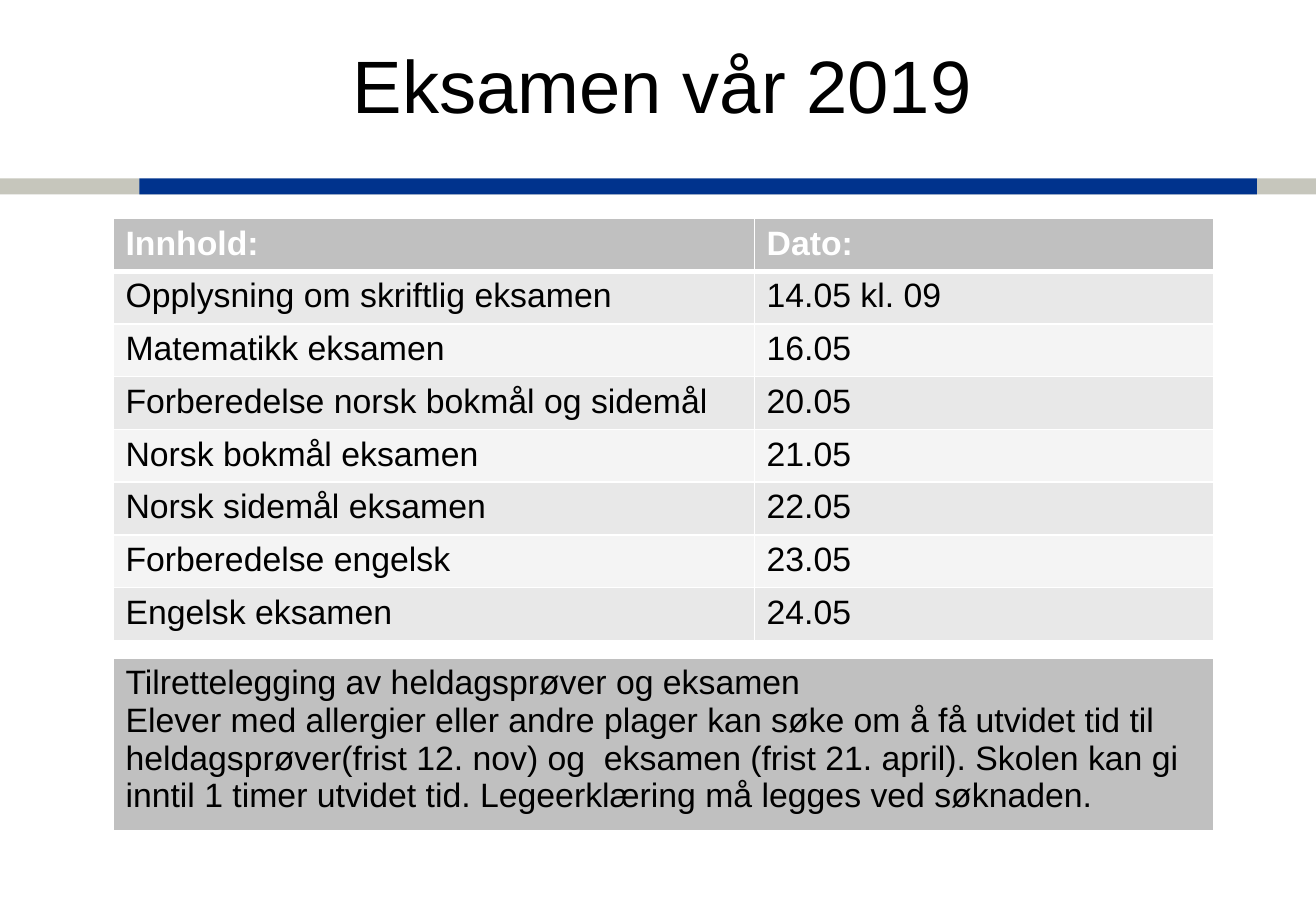
"""Build the slide with the exam dates for spring 2019."""
from dataclasses import dataclass

from lxml import etree
from pptx import Presentation
from pptx.dml.color import RGBColor
from pptx.enum.shapes import MSO_SHAPE
from pptx.enum.text import MSO_ANCHOR, PP_ALIGN
from pptx.oxml.ns import qn
from pptx.util import Pt

RECTANGLE = MSO_SHAPE.RECTANGLE
TOP = MSO_ANCHOR.TOP
CENTER = PP_ALIGN.CENTER


@dataclass(frozen=True)
class Theme:
    font: str = "Arial"
    title_size: int = 44
    table_size: int = 20
    black: str = "000000"
    white: str = "FFFFFF"
    blue: str = "00338D"
    sand: str = "C6C6BC"
    header: str = "C0C0C0"
    odd_row: str = "E8E8E8"
    even_row: str = "F4F4F4"


THEME = Theme()


def add_run(paragraph, text, size, color, bold=False):
    run = paragraph.add_run()
    run.text = text
    run.font.name = THEME.font
    run.font.size = Pt(size)
    run.font.bold = bold
    run.font.color.rgb = RGBColor.from_string(color)


def style_cell(cell, fill, top=1, bottom=1):
    properties = cell._tc.get_or_add_tcPr()
    for side, width in (("L", 1), ("R", 1), ("T", top), ("B", bottom)):
        line = etree.SubElement(properties, qn(f"a:ln{side}"), w=str(Pt(width)))
        solid = etree.SubElement(line, qn("a:solidFill"))
        etree.SubElement(solid, qn("a:srgbClr"), val=THEME.white)
    cell.fill.solid()
    cell.fill.fore_color.rgb = RGBColor.from_string(fill)


WIDTH, HEIGHT = 780, 540
TABLE_LEFT = 67.2
COLUMN_WIDTHS = (380, 272)
ROW_HEIGHT = 29.5

BANDS = [
    (0, 98, WIDTH, 17.2, THEME.sand),
    (82.6, 98, 662.4, 17.2, THEME.blue),
    (0, 0, WIDTH, 105.8, THEME.white),
]
SCHEDULE = [
    ("Innhold:", "Dato:"),
    ("Opplysning om skriftlig eksamen", "14.05 kl. 09"),
    ("Matematikk eksamen", "16.05"),
    ("Forberedelse norsk bokmål og sidemål", "20.05"),
    ("Norsk bokmål eksamen", "21.05"),
    ("Norsk sidemål eksamen", "22.05"),
    ("Forberedelse engelsk", "23.05"),
    ("Engelsk eksamen", "24.05"),
]
ACCOMMODATION = [
    "Tilrettelegging av heldagsprøver og eksamen",
    "Elever med allergier eller andre plager kan søke om å få utvidet tid til "
    "heldagsprøver(frist 12. nov) og  eksamen (frist 21. april). Skolen kan gi "
    "inntil 1 timer utvidet tid. Legeerklæring må legges ved søknaden.",
]

prs = Presentation()
prs.slide_width, prs.slide_height = Pt(WIDTH), Pt(HEIGHT)
slide = prs.slides.add_slide(prs.slide_layouts[6])

for left, top, width, height, color in BANDS:
    band = slide.shapes.add_shape(RECTANGLE, Pt(left), Pt(top), Pt(width), Pt(height))
    band.shadow.inherit = False
    band.fill.solid()
    band.fill.fore_color.rgb = RGBColor.from_string(color)
    band.line.fill.background()

title = slide.shapes.add_textbox(Pt(39.6), Pt(15), Pt(706.4), Pt(85)).text_frame
title.word_wrap = True
title.vertical_anchor = TOP
title.margin_top = Pt(8)
title.paragraphs[0].alignment = CENTER
add_run(title.paragraphs[0], "Eksamen vår 2019", THEME.title_size, THEME.black)

schedule = slide.shapes.add_table(
    len(SCHEDULE), len(COLUMN_WIDTHS), Pt(TABLE_LEFT), Pt(129.6),
    Pt(sum(COLUMN_WIDTHS)), Pt(ROW_HEIGHT * len(SCHEDULE))).table
for column, width in zip(schedule.columns, COLUMN_WIDTHS):
    column.width = Pt(width)
for row, entry in enumerate(SCHEDULE):
    is_header = row == 0
    schedule.rows[row].height = Pt(ROW_HEIGHT)
    fill = THEME.header if is_header else (THEME.even_row, THEME.odd_row)[row % 2]
    color = THEME.white if is_header else THEME.black
    for column, text in enumerate(entry):
        cell = schedule.cell(row, column)
        style_cell(cell, fill, top=3 if row == 1 else 1, bottom=3 if is_header else 1)
        add_run(cell.text_frame.paragraphs[0], text, THEME.table_size, color, is_header)

accommodation = slide.shapes.add_table(
    1, 1, Pt(TABLE_LEFT), Pt(390.2), Pt(sum(COLUMN_WIDTHS)), Pt(97)).table.cell(0, 0)
style_cell(accommodation, THEME.header, bottom=3)
for index, text in enumerate(ACCOMMODATION):
    frame = accommodation.text_frame
    paragraph = frame.add_paragraph() if index else frame.paragraphs[0]
    add_run(paragraph, text, THEME.table_size, THEME.black)

prs.save("out.pptx")
